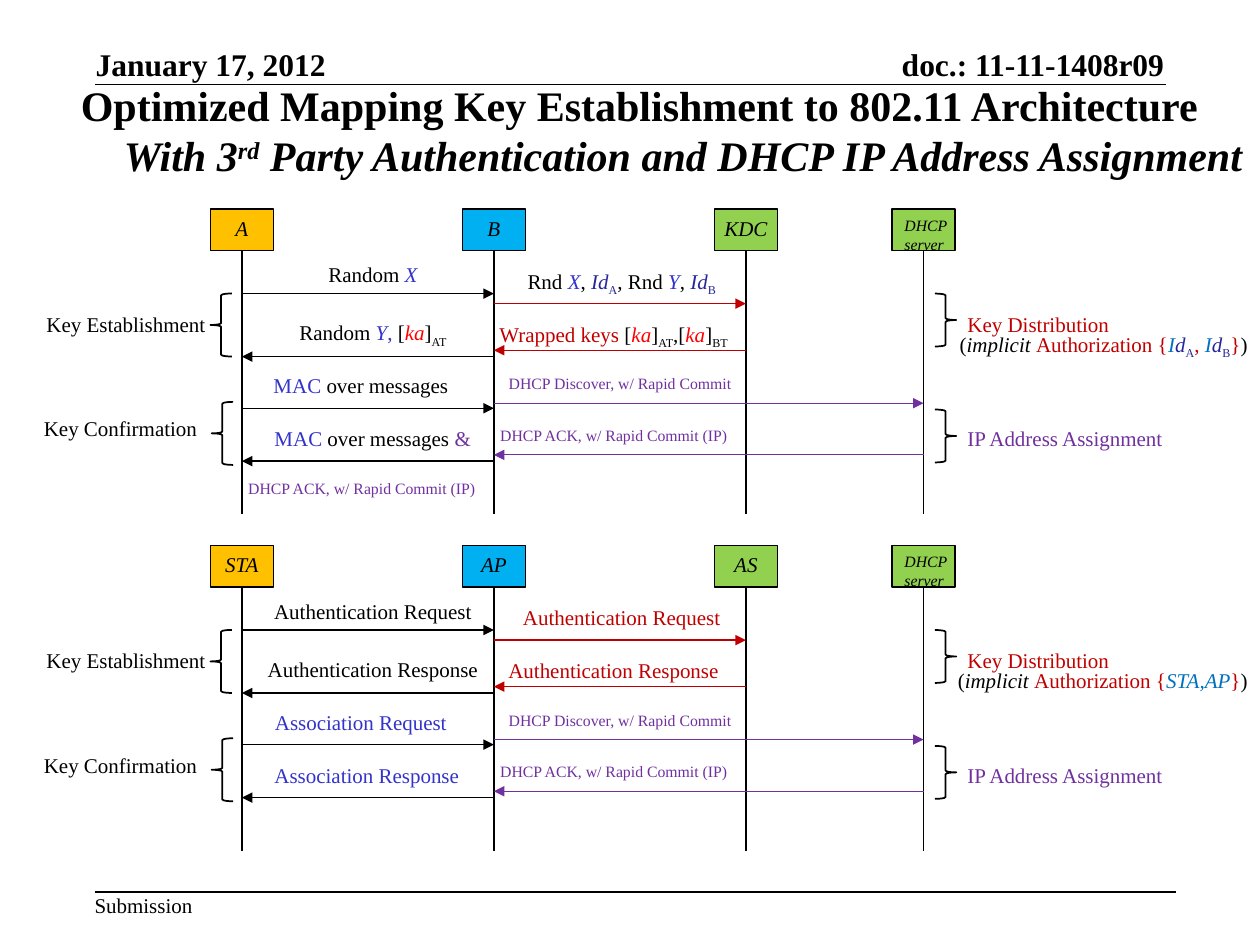
"""Build the slide that maps key establishment to the 802.11 architecture."""
from lxml import etree
from pptx import Presentation
from pptx import util as u
from pptx.dml.color import RGBColor
from pptx.enum import shapes, text
from pptx.oxml.ns import qn

COLORS = {
    "black": "000000", "amber": "FFC000", "cyan": "00B0F0", "green": "92D050",
    "indigo": "3333CC", "navy": "262699", "red": "FF0000", "crimson": "C00000",
    "purple": "7030A0", "azure": "0070C0",
}
BASELINES = {"sub": "-25000", "sup": "30000"}
LEFT, CENTER, RIGHT = text.PP_ALIGN.LEFT, text.PP_ALIGN.CENTER, text.PP_ALIGN.RIGHT
TOP, BOTTOM = text.MSO_ANCHOR.TOP, text.MSO_ANCHOR.BOTTOM
LIFELINES = [1.92, 3.92, 5.92, 7.33]
BLOCK_STEP = 2.67


class Sketch:
    """Holds the style and the current slide."""

    font = "Times New Roman"

    def __init__(self, slide):
        self.s = slide

    def color(self, name):
        return RGBColor.from_string(COLORS[name])

    def fill_paragraph(self, p, runs, size=12, color="black", align=LEFT, bold=False,
                       italic=False):
        """Fill a paragraph from a string or from (text, color, style) runs."""
        p.alignment = align
        p.font.name, p.font.size = self.font, u.Pt(size)
        p.font.bold, p.font.italic = bold, italic
        p.font.color.rgb = self.color(color)
        for words, run_color, style in [(runs, None, "")] if isinstance(runs, str) else runs:
            r = p.add_run()
            r.text = words
            if run_color:
                r.font.color.rgb = self.color(run_color)
            if "italic" in style:
                r.font.italic = True
            for key, shift in BASELINES.items():
                if key in style:
                    r._r.get_or_add_rPr().set("baseline", shift)

    def frame(self, tf, margins=(0.1, 0.05, 0.1, 0.05), anchor=TOP, wrap=True):
        tf.margin_left, tf.margin_top, tf.margin_right, tf.margin_bottom = map(u.Inches, margins)
        tf.vertical_anchor, tf.word_wrap = anchor, wrap
        tf.auto_size = text.MSO_AUTO_SIZE.NONE

    def title(self, box, lines):
        sp = self.s.shapes.title
        sp.left, sp.top, sp.width, sp.height = map(u.Inches, box)
        tf = sp.text_frame
        self.frame(tf, wrap=False)
        for i, (runs, align) in enumerate(lines):
            p = tf.add_paragraph() if i else tf.paragraphs[0]
            p.line_spacing, p.space_before = 1.0, u.Pt(0)
            self.fill_paragraph(p, runs, 24, align=align, bold=True)

    def label(self, box, runs, wrap=False, anchor=TOP, margins=(0.1, 0.05, 0.1, 0.05), **style):
        tf = self.s.shapes.add_textbox(*map(u.Inches, box)).text_frame
        self.frame(tf, margins, anchor, wrap)
        self.fill_paragraph(tf.paragraphs[0], runs, **style)

    def shape(self, kind, box, fill=None, width=0.75):
        sp = self.s.shapes.add_shape(kind, *map(u.Inches, box))
        sp.shadow.inherit = False
        if fill:
            sp.fill.solid()
            sp.fill.fore_color.rgb = self.color(fill)
        else:
            sp.fill.background()
        sp.line.color.rgb, sp.line.width = self.color("black"), u.Pt(width)
        return sp

    def party(self, x, y, name, fill):
        """Draw a named box with its lifeline."""
        tf = self.shape(shapes.MSO_SHAPE.RECTANGLE, (x - 0.25, y, 0.5, 0.33), fill).text_frame
        server = " " in name
        self.frame(tf, (0.1 if server else 0, 0.05, 0, 0))
        self.fill_paragraph(tf.paragraphs[0], name, 9 if server else 12,
                            align=LEFT if server else CENTER, italic=True)
        self.line((x, y + 0.33), (x, y + 2.42))

    def brace(self, side, x, y, height):
        self.shape(side, (x, y, 0.17, height), width=1)

    def line(self, start, end, color="black", width=0.75, arrow=False):
        cx = self.s.shapes.add_connector(shapes.MSO_CONNECTOR.STRAIGHT,
                                         *map(u.Inches, (*start, *end)))
        cx.line.color.rgb, cx.line.width = self.color(color), u.Pt(width)
        if arrow:
            ln = cx._element.spPr.find(qn("a:ln"))
            etree.SubElement(ln, qn("a:tailEnd"), type="triangle")
        etree.SubElement(cx._element.spPr, qn("a:effectLst"))


FILLS = ["amber", "cyan", "green", "green"]
ARROWS = [
    (0, 1, 2.33, "black"), (1, 0, 2.83, "black"), (0, 1, 3.24, "black"), (1, 0, 3.66, "black"),
    (1, 2, 2.41, "crimson"), (2, 1, 2.78, "crimson"),
    (1, 3, 3.2, "purple"), (3, 1, 3.61, "purple"),
]
MESSAGE_SLOTS = [
    (1.92, 2.03, 2.08), (2, 2.49, 1.92), (2, 2.91, 1.73), (2.08, 3.33, 1.78),
    (3.92, 2.08, 2.03), (3.83, 2.5, 2.08),
]
ACK = "DHCP ACK, w/ Rapid Commit (IP)"
SIDE_NOTES = [
    (0.27, 2.42, 1.48, "Key Establishment", "black"),
    (0.25, 3.25, 1.43, "Key Confirmation", "black"),
    (7.58, 2.42, 1.39, "Key Distribution", "crimson"),
    (7.58, 3.33, 1.77, "IP Address Assignment", "purple"),
]
SMALL_NOTES = [(3.92, 2.92, 2, "DHCP Discover, w/ Rapid Commit"), (3.83, 3.33, 2.08, ACK)]
BRACES = [
    (shapes.MSO_SHAPE.LEFT_BRACE, 1.67, 2.33, 0.5),
    (shapes.MSO_SHAPE.LEFT_BRACE, 1.68, 3.19, 0.5),
    (shapes.MSO_SHAPE.RIGHT_BRACE, 7.42, 2.33, 0.42),
    (shapes.MSO_SHAPE.RIGHT_BRACE, 7.42, 3.25, 0.42),
]


def wrapped_key(suffix):
    return [("[", "black", ""), ("ka", "red", "italic"), ("]", "black", ""),
            (suffix, "black", "sub")]


def identity(suffix, first="navy"):
    return [("I", first, "italic"), ("d", "navy", "italic"), (suffix, "navy", "sub")]


def authorization(parties):
    return [("(", "black", ""), ("implicit ", "black", "italic"),
            ("Authorization {", "crimson", ""), *parties,
            ("}", "crimson", ""), (")", "black", "")]


X, Y = ("X", "indigo", "italic"), ("Y", "indigo", "italic")
MAC = ("MAC", "indigo", "")
BLOCKS = [
    {
        "parties": ["A", "B", "KDC", "DHCP server"],
        "messages": [
            [("Random ", "black", ""), X],
            [("Random ", "black", ""), Y, (", ", "indigo", ""), *wrapped_key("AT")],
            [MAC, (" over messages", "black", "")],
            [MAC, (" over messages ", "black", ""), ("&", "purple", "")],
            [("Rnd ", "black", ""), X, (", ", "black", ""), *identity("A"),
             (", Rnd ", "black", ""), Y, (", ", "black", ""), *identity("B")],
            [("Wrapped keys ", "crimson", ""), *wrapped_key("AT"), (",", "black", ""),
             *wrapped_key("BT")],
        ],
        "notes": SMALL_NOTES + [(1.83, 3.75, 2.08, ACK)],
        "authorization": authorization(
            [*identity("A", "azure"), (", ", "crimson", ""), *identity("B", "azure")]),
    },
    {
        "parties": ["STA", "AP", "AS", "DHCP server"],
        "messages": [[(words, color, "")] for words, color in (
            ("Authentication Request", "black"), ("Authentication Response", "black"),
            ("Association Request", "indigo"), ("Association Response", "indigo"),
            ("Authentication Request", "crimson"), ("Authentication Response", "crimson"))],
        "notes": SMALL_NOTES,
        "authorization": authorization([("STA,AP", "azure", "italic")]),
    },
]


def draw_block(k, block, dy):
    for x, name, fill in zip(LIFELINES, block["parties"], FILLS):
        k.party(x, 1.66 + dy, name, fill)
    for start, end, y, color in ARROWS:
        k.line((LIFELINES[start], y + dy), (LIFELINES[end], y + dy), color, arrow=True)
    for (x, y, w), runs in zip(MESSAGE_SLOTS, block["messages"]):
        hangs_left = x == 2.08
        k.label((x, y + dy, w, 0.3), runs, wrap=not hangs_left,
                align=LEFT if hangs_left else CENTER)
    for x, y, w, words in block["notes"]:
        k.label((x, y + dy, w, 0.25), words, wrap=True, size=9, color="purple", align=CENTER)
    for x, y, w, words, color in SIDE_NOTES:
        k.label((x, y + dy, w, 0.3), words, color=color)
    k.label((7.46, 2.58 + dy, 2.54, 0.3), block["authorization"], align=RIGHT)
    for side, x, y, height in BRACES:
        k.brace(side, x, y + dy, height)


def main():
    prs = Presentation()
    prs.slide_width, prs.slide_height = u.Inches(10), u.Inches(7.5)
    k = Sketch(prs.slides.add_slide(prs.slide_layouts[5]))
    flush = {"margins": (0, 0, 0, 0)}
    heading = {"anchor": BOTTOM, "size": 18, "bold": True, **flush}
    k.label((6.63, 0.36, 2.61, 0.3), "doc.: 11-11-1408r09", align=RIGHT, **heading)
    k.label((0.76, 0.36, 1.84, 0.3), "January 17, 2012", **heading)
    k.label((0.75, 7.08, 0.79, 0.2), "Submission", **flush)
    k.line((0.75, 0.67), (9.25, 0.67), width=1)
    k.line((0.75, 7.08), (9.33, 7.08), width=1)
    k.title((0.19, 0.58, 9.77, 0.91), [
        ("Optimized Mapping Key Establishment to 802.11 Architecture", CENTER),
        ([("With 3", None, "italic"), ("rd", None, "italic sup"),
          (" Party Authentication and DHCP IP Address Assignment", None, "italic")], RIGHT),
    ])
    for i, block in enumerate(BLOCKS):
        draw_block(k, block, i * BLOCK_STEP)
    prs.save("out.pptx")


if __name__ == "__main__":
    main()
